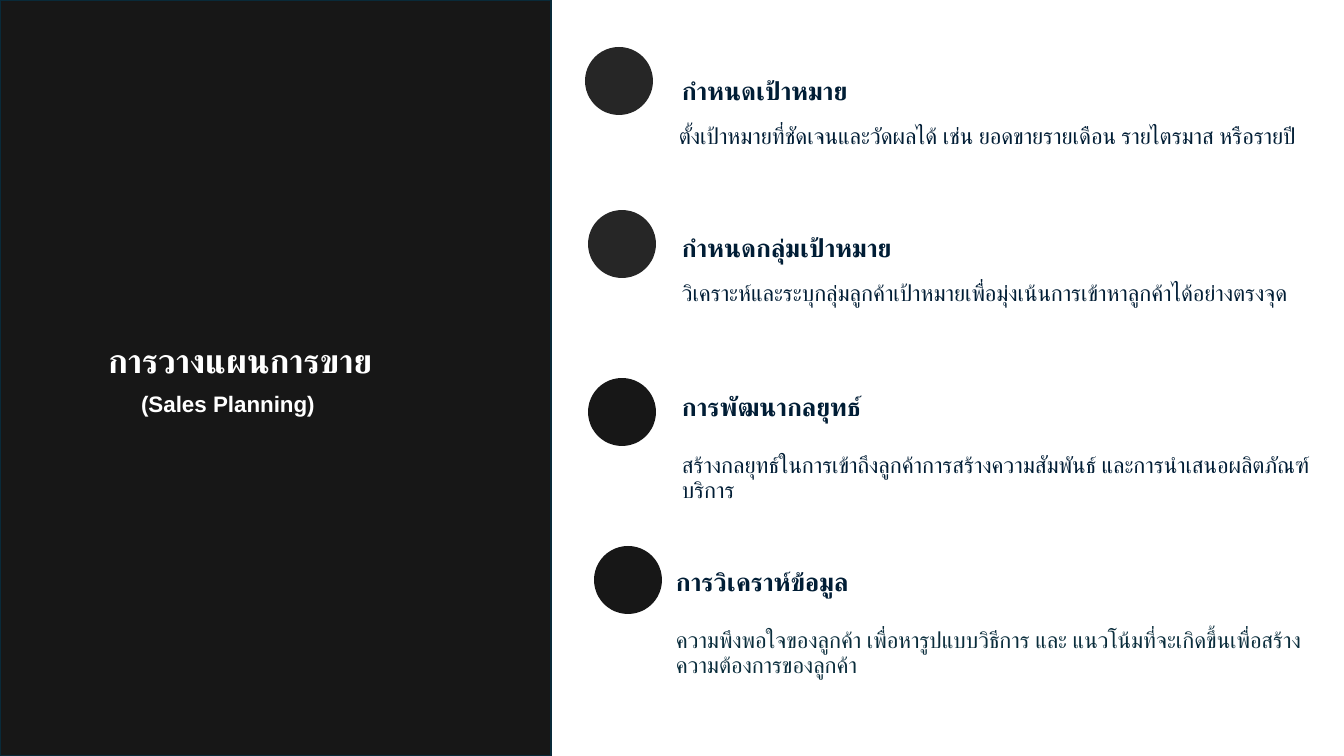
import pptx
import pptx.util
import pptx.dml.color
import pptx.enum.shapes
import pptx.enum.text

Pt = pptx.util.Pt
PX = 914400 / 100.8
COLORS = {"panel": "171717", "soft": "262626", "edge": "092A39",
          "navy": "001D35", "teal": "0A2D3C", "white": "FFFFFF"}


def color(name):
    return pptx.dml.color.RGBColor.from_string(COLORS[name])


def px(*lengths):
    return [round(length * PX) for length in lengths]


class PlanSlide:
    font = "Arial"

    def __init__(self, deck):
        self.slide = deck.slides.add_slide(deck.slide_layouts[5])

    def fill_lines(self, frame, lines):
        for index, (words, size, bold, ink, layout) in enumerate(lines):
            line = frame.add_paragraph() if index else frame.paragraphs[0]
            line.alignment = pptx.enum.text.PP_ALIGN.LEFT
            for key, value in layout.items():
                setattr(line, key, Pt(value))
            run = line.add_run()
            run.text = words
            look = {"name": self.font, "size": Pt(size), "bold": bold}
            for key, value in look.items():
                setattr(run.font, key, value)
            run.font.color.rgb = color(ink)

    def panel(self, box, lines, indents):
        title = self.slide.shapes.title
        for key, value in zip(("left", "top", "width", "height"), px(*box)):
            setattr(title, key, value)
        title.fill.solid()
        title.fill.fore_color.rgb = color("panel")
        title.line.color.rgb = color("edge")
        title.line.width = Pt(1.5)
        frame = title.text_frame
        frame.auto_size = pptx.enum.text.MSO_AUTO_SIZE.NONE
        frame.vertical_anchor = pptx.enum.text.MSO_ANCHOR.MIDDLE
        self.fill_lines(frame, lines)
        for line, indent in zip(frame.paragraphs, indents):
            properties = line._p.get_or_add_pPr()
            properties.set("marL", str(px(indent)[0]))
            properties.set("indent", "0")

    def dot(self, left, top, fill):
        dot = self.slide.shapes.add_shape(
            pptx.enum.shapes.MSO_SHAPE.OVAL, *px(left, top, 68, 68))
        dot.shadow.inherit = False
        dot.fill.solid()
        dot.fill.fore_color.rgb = color(fill)
        dot.line.fill.background()

    def text(self, box, lines):
        frame = self.slide.shapes.add_textbox(*px(*box)).text_frame
        frame.word_wrap = True
        frame.auto_size = pptx.enum.text.MSO_AUTO_SIZE.SHAPE_TO_FIT_TEXT
        self.fill_lines(frame, lines)


def heading(words, layout):
    return words, 18, True, "navy", layout


def detail(words, layout, ink="navy"):
    return words, 16, False, ink, layout


def main():
    deck = pptx.Presentation()
    deck.slide_width, deck.slide_height = px(1344, 756)
    plan = PlanSlide(deck)

    plan.panel((0, 0, 551, 756), [
        ("การวางแผนการขาย", 24, True, "white", {}),
        ("(Sales Planning)", 16, True, "white", {"space_before": 7, "space_after": 2}),
    ], (98, 131))

    for left, top, fill in [(585, 47, "soft"), (588, 210, "soft"),
                            (588, 378, "panel"), (594, 546, "panel")]:
        plan.dot(left, top, fill)

    tight = {"line_spacing": 18, "space_before": 7.5, "space_after": 6}
    loose = {**tight, "space_after": 15}
    plan.text((672, 70, 672, 40), [heading("กำหนดเป้าหมาย", {})])
    plan.text((669, 117, 672, 65), [
        detail("ตั้งเป้าหมายที่ชัดเจนและวัดผลได้ เช่น ยอดขายรายเดือน รายไตรมาส หรือรายปี", {})])
    plan.text((672, 232, 672, 107), [
        heading("กำหนดกลุ่มเป้าหมาย", tight),
        detail("วิเคราะห์และระบุกลุ่มลูกค้าเป้าหมายเพื่อมุ่งเน้นการเข้าหาลูกค้าได้อย่างตรงจุด", tight)])
    plan.text((672, 391, 672, 120), [
        heading("การพัฒนากลยุทธ์", loose),
        detail("สร้างกลยุทธ์ในการเข้าถึงลูกค้าการสร้างความสัมพันธ์ และการนำเสนอผลิตภัณฑ์บริการ", loose)])
    plan.text((666, 566, 677, 120), [
        heading("การวิเคราห์ข้อมูล", loose),
        detail("ความพึงพอใจของลูกค้า เพื่อหารูปแบบวิธีการ และ แนวโน้มที่จะเกิดขึ้นเพื่อสร้างความต้องการของลูกค้า",
               loose, "teal")])

    deck.save("out.pptx")


if __name__ == "__main__":
    main()
